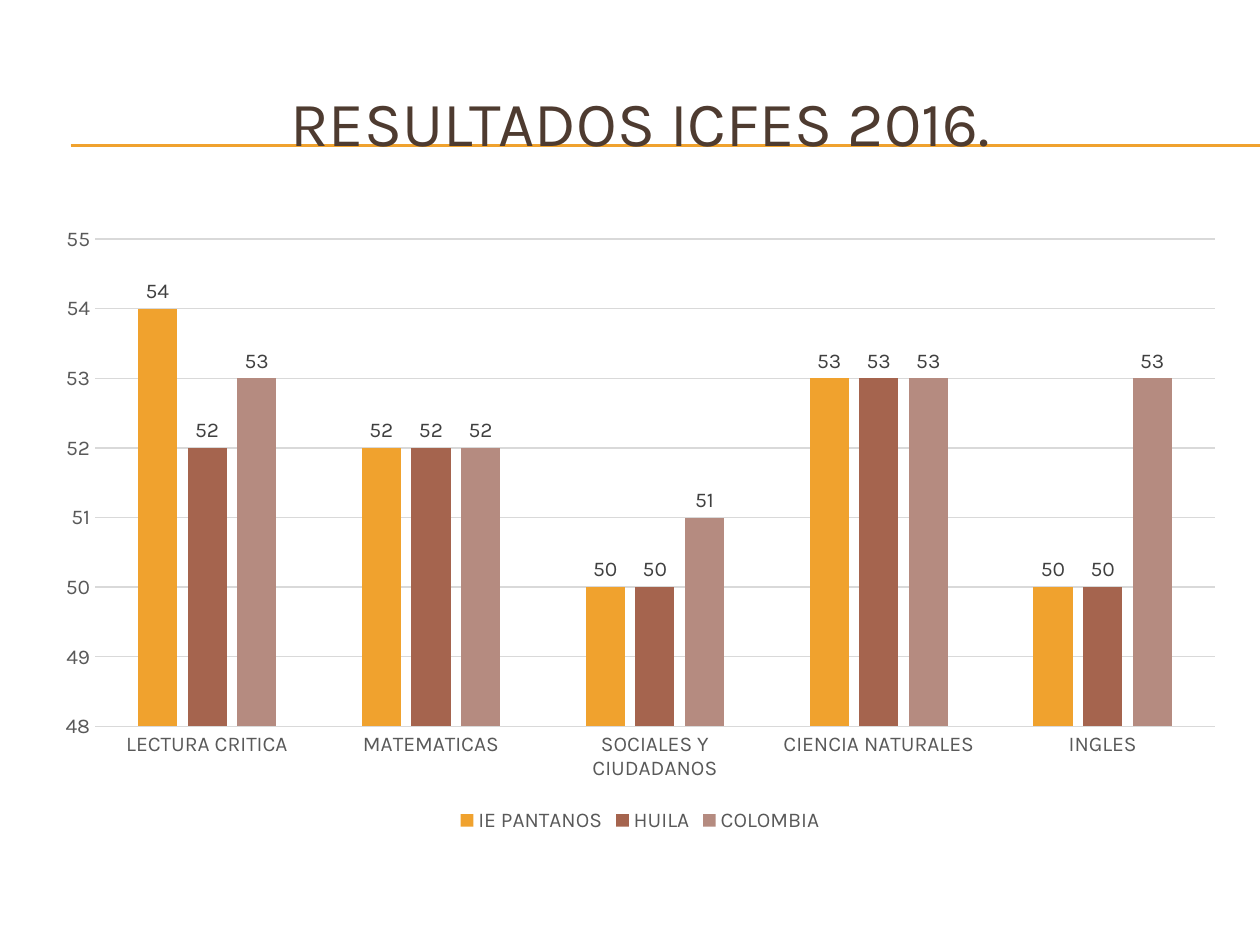
import lxml.etree
import pptx
import pptx.chart.data
import pptx.dml.color
import pptx.enum.chart
import pptx.enum.shapes
import pptx.enum.text
import pptx.oxml.ns
import pptx.util
from pptx.util import Inches

RGBColor = pptx.dml.color.RGBColor
ORANGE = RGBColor(0xF0, 0xA2, 0x2E)
RUST = RGBColor(0xA5, 0x64, 0x4E)
ROSE = RGBColor(0xB5, 0x8B, 0x80)
BROWN = RGBColor(0x4E, 0x3B, 0x30)
AXIS_GRAY = RGBColor(0x59, 0x59, 0x59)
LABEL_GRAY = RGBColor(0x40, 0x40, 0x40)
GRID_GRAY = RGBColor(0xD9, 0xD9, 0xD9)
BLACK = RGBColor(0, 0, 0)
FONT = "Karla"

SUBJECTS = ["LECTURA CRITICA", "MATEMATICAS", "SOCIALES Y CIUDADANOS",
            "CIENCIA NATURALES", "INGLES"]
RESULTS = [
    ("IE PANTANOS", (54, 52, 50, 53, 50), ORANGE),
    ("HUILA", (52, 52, 50, 53, 50), RUST),
    ("COLOMBIA", (53, 52, 51, 53, 53), ROSE),
]


def set_font(font, size, color):
    font.name = FONT
    font.size = pptx.util.Pt(size)
    font.bold = False
    font.color.rgb = color


def set_line(line, color):
    line.color.rgb = color
    line.width = pptx.util.Pt(0.75)


def add_rules(s, left, top, width, gap):
    for y in (top, top + gap):
        line = s.shapes.add_connector(
            pptx.enum.shapes.MSO_CONNECTOR.STRAIGHT, left, y, left + width, y)
        set_line(line.line, ORANGE)
        lxml.etree.SubElement(line.element.spPr, pptx.oxml.ns.qn("a:effectLst"))


def place_title(s, left, top, width, height):
    sp = s.shapes.title
    sp.left, sp.top, sp.width, sp.height = left, top, width, height
    tf = sp.text_frame
    tf.text = "RESULTADOS ICFES 2016."
    tf.word_wrap = True
    tf.auto_size = pptx.enum.text.MSO_AUTO_SIZE.NONE
    tf.vertical_anchor = pptx.enum.text.MSO_ANCHOR.MIDDLE
    p = tf.paragraphs[0]
    p.alignment = pptx.enum.text.PP_ALIGN.CENTER
    set_font(p.font, 36, BROWN)
    sp.element.getparent().append(sp.element)


def add_results_chart(s, left, top, width, height):
    data = pptx.chart.data.CategoryChartData()
    data.categories = SUBJECTS
    for name, values, _ in RESULTS:
        data.add_series(name, values)
    chart = s.shapes.add_chart(
        pptx.enum.chart.XL_CHART_TYPE.COLUMN_CLUSTERED,
        left, top, width, height, data).chart
    chart.has_title = False
    set_font(chart.font, 10, BLACK)

    plot = chart.plots[0]
    plot.vary_by_categories = False
    plot.gap_width = 219
    plot.overlap = -27
    for series, (_, _, color) in zip(plot.series, RESULTS):
        series.format.fill.solid()
        series.format.fill.fore_color.rgb = color
        labels = series.data_labels
        labels.show_value = True
        labels.position = pptx.enum.chart.XL_LABEL_POSITION.OUTSIDE_END
        set_font(labels.font, 12, LABEL_GRAY)

    for axis in (chart.category_axis, chart.value_axis):
        axis.major_tick_mark = pptx.enum.chart.XL_TICK_MARK.NONE
        axis.minor_tick_mark = pptx.enum.chart.XL_TICK_MARK.NONE
        set_font(axis.tick_labels.font, 12, AXIS_GRAY)
    set_line(chart.category_axis.format.line, GRID_GRAY)
    value_axis = chart.value_axis
    value_axis.format.line.fill.background()
    value_axis.minimum_scale = 48
    value_axis.maximum_scale = 55
    value_axis.major_unit = 1
    set_line(value_axis.major_gridlines.format.line, GRID_GRAY)

    chart.has_legend = True
    chart.legend.position = pptx.enum.chart.XL_LEGEND_POSITION.BOTTOM
    chart.legend.include_in_layout = False
    set_font(chart.legend.font, 12, AXIS_GRAY)


def main():
    prs = pptx.Presentation()
    prs.slide_width, prs.slide_height = Inches(10), Inches(7.5)
    s = prs.slides.add_slide(prs.slide_layouts[5])
    add_rules(s, Inches(0.56), Inches(1.15), Inches(9.44), Inches(0.01))
    place_title(s, Inches(0.33), Inches(0.5), Inches(9.5), Inches(0.92))
    add_results_chart(s, Inches(0.33), Inches(1.7), Inches(9.5), Inches(4.95))
    prs.save("out.pptx")


if __name__ == "__main__":
    main()
